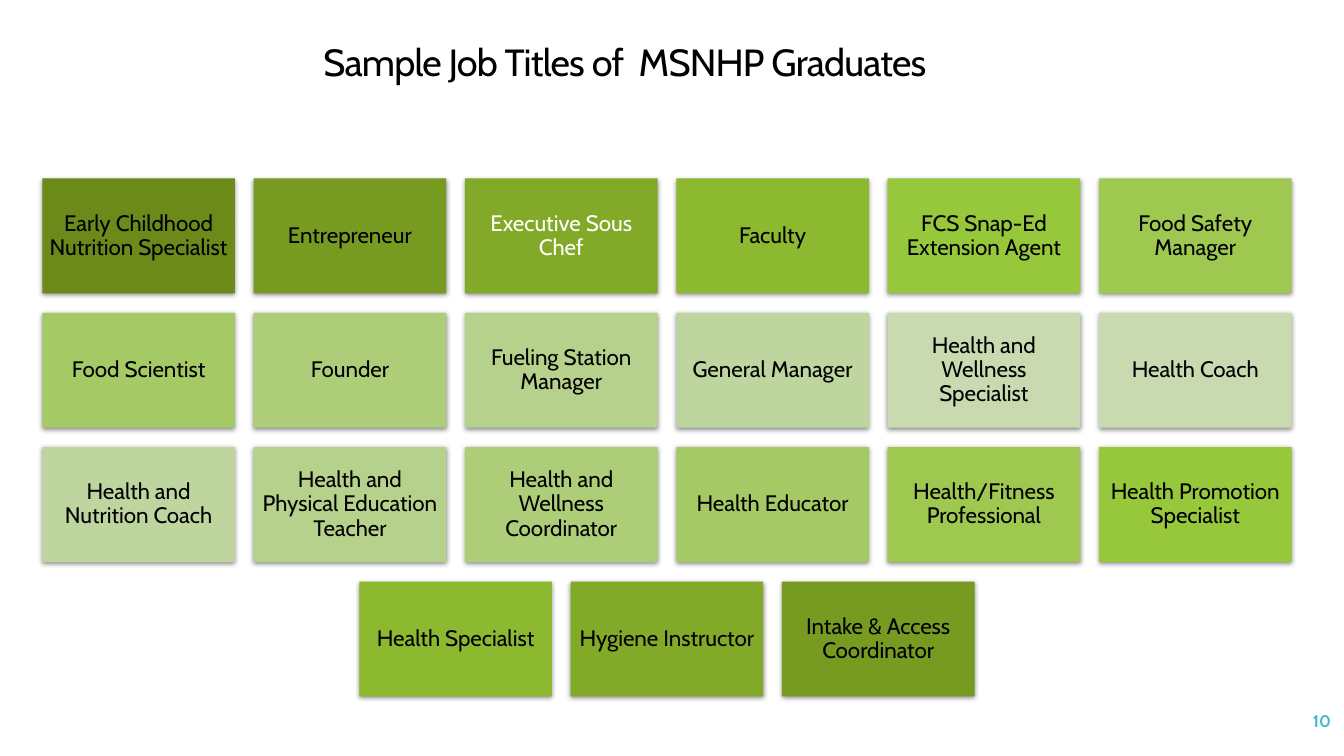
from lxml import etree
from pptx import Presentation
from pptx.dml.color import RGBColor
from pptx.enum.shapes import MSO_SHAPE
from pptx.enum.text import MSO_ANCHOR, MSO_AUTO_SIZE, PP_ALIGN
from pptx.oxml.ns import qn
from pptx.util import Inches, Pt

RECTANGLE = MSO_SHAPE.RECTANGLE
MIDDLE = MSO_ANCHOR.MIDDLE
NO_AUTOFIT = MSO_AUTO_SIZE.NONE
CENTER, RIGHT = PP_ALIGN.CENTER, PP_ALIGN.RIGHT

FONT = "Cabin"
BLACK, WHITE, TEAL = "000000", "FFFFFF", "40BAD2"

# Greens run from dark to light, then back again
SHADES = ["6B8A1A", "779B21", "82AA28", "8DB930", "97C73A", "9EC850",
          "A5CA65", "ADCD79", "B6D18C", "BFD59F", "C9DAB1"]
TILE_COLORS = SHADES + SHADES[::-1]

JOB_TITLES = [
    "Early Childhood Nutrition Specialist", "Entrepreneur",
    "Executive Sous Chef", "Faculty", "FCS Snap-Ed Extension Agent",
    "Food Safety Manager", "Food Scientist", "Founder",
    "Fueling Station Manager", "General Manager",
    "Health and Wellness Specialist", "Health Coach",
    "Health and Nutrition Coach", "Health and Physical Education Teacher",
    "Health and Wellness Coordinator", "Health Educator",
    "Health/Fitness Professional", "Health Promotion Specialist",
    "Health Specialist", "Hygiene Instructor", "Intake & Access Coordinator",
]
WHITE_TEXT_JOBS = {"Executive Sous Chef"}

# Tile grid, in inches
COLUMNS = 6
TILE_WIDTH, TILE_HEIGHT = 1.91, 1.14
COLUMN_STEP = (10.9 - 0.42) / (COLUMNS - 1)
ROW_STEP = 4 / 3
GRID_CENTER, GRID_TOP = 6.615, 1.77


def rgb(color):
    return RGBColor.from_string(color)


def set_attributes(target, values):
    for name, value in values.items():
        setattr(target, name, value)


def write_text(shape, text, size, color, frame_format, paragraph_format,
               bold=False):
    frame = shape.text_frame
    set_attributes(frame, {"word_wrap": True, "auto_size": NO_AUTOFIT,
                           "vertical_anchor": MIDDLE, **frame_format})
    paragraph = frame.paragraphs[0]
    set_attributes(paragraph, paragraph_format)
    run = paragraph.add_run()
    run.text = text
    set_attributes(run.font, {"name": FONT, "size": Pt(size), "bold": bold})
    run.font.color.rgb = rgb(color)
    return run


def add_soft_shadow(shape):
    shape.shadow.inherit = False
    effects = shape._element.spPr.find(qn("a:effectLst"))
    shadow = etree.SubElement(effects, qn("a:outerShdw"), {
        "blurRad": str(Pt(3.5)), "dist": str(Pt(1.1)), "dir": "5400000",
        "algn": "ctr", "rotWithShape": "0"})
    color = etree.SubElement(shadow, qn("a:srgbClr"), val=BLACK)
    etree.SubElement(color, qn("a:alpha"), val="45000")


def add_title(slide, text):
    title = slide.shapes.title
    set_attributes(title, {"left": Inches(0), "top": Inches(0.4),
                           "width": Inches(12.39), "height": Inches(0.47)})
    run = write_text(title, text, 27, BLACK, {},
                     {"alignment": CENTER, "line_spacing": 0.9})
    run.font._element.set("spc", "-60")


def add_tile(slide, left, top, text, fill):
    tile = slide.shapes.add_shape(RECTANGLE, Inches(left), Inches(top),
                                  Inches(TILE_WIDTH), Inches(TILE_HEIGHT))
    tile.fill.solid()
    tile.fill.fore_color.rgb = rgb(fill)
    tile.line.fill.background()
    add_soft_shadow(tile)
    sides = ("left", "top", "right", "bottom")
    write_text(tile, text, 16, WHITE if text in WHITE_TEXT_JOBS else BLACK,
               {f"margin_{side}": Inches(0.07) for side in sides},
               {"alignment": CENTER, "line_spacing": 0.9,
                "space_after": Pt(5.6)})


def add_job_grid(slide):
    for index, job in enumerate(JOB_TITLES):
        row, column = divmod(index, COLUMNS)
        # A short last row is centred under the full ones
        row_count = min(COLUMNS, len(JOB_TITLES) - row * COLUMNS)
        row_width = (row_count - 1) * COLUMN_STEP + TILE_WIDTH
        left = GRID_CENTER - row_width / 2 + column * COLUMN_STEP
        add_tile(slide, left, GRID_TOP + row * ROW_STEP, job,
                 TILE_COLORS[index])


def add_page_number(slide, text):
    box = slide.shapes.add_textbox(Inches(11.63), Inches(6.95),
                                   Inches(1.67), Inches(0.4))
    write_text(box, text, 12, TEAL, {},
               {"alignment": RIGHT, "space_after": Pt(6)}, bold=True)


def main():
    presentation = Presentation()
    presentation.slide_width = Inches(13.33)
    presentation.slide_height = Inches(7.5)
    title_only = presentation.slide_layouts[5]
    slide = presentation.slides.add_slide(title_only)

    add_page_number(slide, "10")
    add_title(slide, "Sample Job Titles of  MSNHP Graduates")
    add_job_grid(slide)
    presentation.save("out.pptx")


if __name__ == "__main__":
    main()
